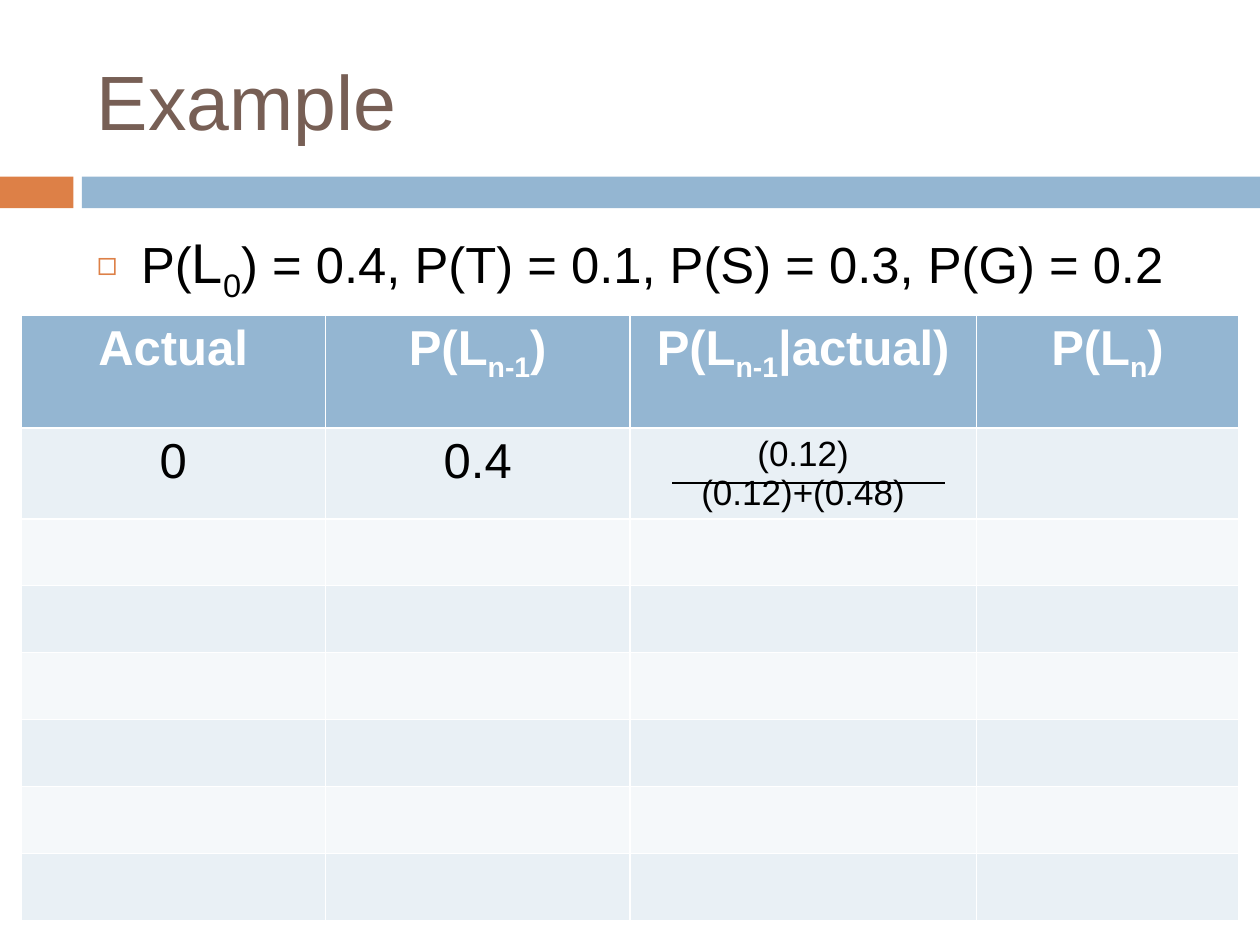
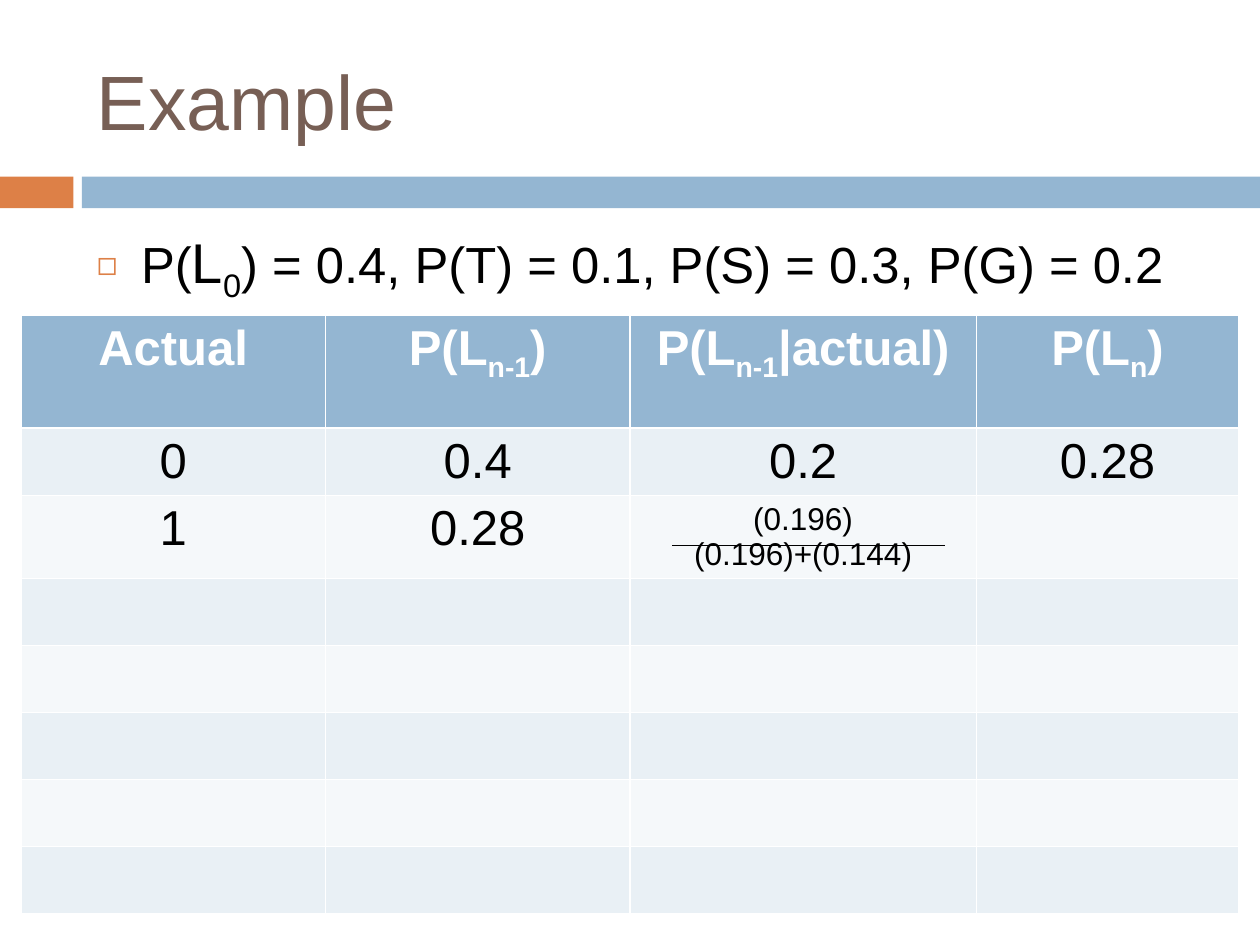
from dataclasses import dataclass
from lxml import etree
from pptx import Presentation
from pptx import util as u
from pptx.dml.color import RGBColor
from pptx.enum import shapes, text
from pptx.oxml import ns


@dataclass(frozen=True)
class Theme:
    face: str = "Arial"
    title: str = "775F55"
    mark: str = "DD8047"
    band: str = "94B6D2"
    odd: str = "E9F0F5"
    even: str = "F5F8FA"
    ink: str = "000000"
    white: str = "FFFFFF"
    big: int = 44
    list: int = 29
    wide: int = 32
    cell: int = 28
    rule: float = 0.79


def place(item, *box):
    """Set left, top, width and height, given in centimetres."""
    for name, value in zip(("left", "top", "width", "height"), box):
        setattr(item, name, u.Cm(value))


class Deck:
    COLS = (6.14, 6.14, 6.98, 5.29)
    HEAD, ROW, COUNT = 2.28, 1.35, 7

    def __init__(self, theme):
        self.theme = theme
        self.deck = Presentation()
        self.deck.slide_width, self.deck.slide_height = u.Cm(25.4), u.Cm(19.05)
        self.base = self.deck.slide_layouts[1]
        title, body = list(self.base.placeholders)[:2]
        place(title, 1.7, 0.64, 22.66, 2.75)
        place(body, 1.7, 4.45, 22.66, 12.5)
        self.slide = None

    def start(self):
        first = self.slide is None
        self.slide = self.deck.slides.add_slide(self.base)
        if first:
            self.band(0, 1.48, self.theme.mark)
            self.band(1.65, 23.75, self.theme.band)

    def band(self, left, width, color):
        """Draw a bar and hand it to the layout, so every slide shows it."""
        bar = self.slide.shapes.add_shape(
            shapes.MSO_SHAPE.RECTANGLE, *map(u.Cm, (left, 3.56, width, 0.64)))
        bar.shadow.inherit = False
        bar.fill.solid()
        bar.fill.fore_color.rgb = RGBColor.from_string(color)
        bar.line.fill.background()
        self.base.shapes.element.insert(2, bar.element)

    def put(self, para, words, size, color, bold=False):
        """Add runs; words between underscores are subscripts, \\n breaks the line."""
        style = {"name": self.theme.face, "size": u.Pt(size), "bold": bold}
        for i, part in enumerate(words.split("_")):
            for j, line in enumerate(part.split("\n")):
                if j:
                    para.add_line_break()
                run = para.add_run()
                run.text = line
                for name, value in style.items():
                    setattr(run.font, name, value)
                run.font.color.rgb = RGBColor.from_string(color)
                if i % 2:
                    run._r.get_or_add_rPr().set("baseline", "-25000")

    def title(self, words):
        frame = self.slide.shapes.title.text_frame
        frame.vertical_anchor = text.MSO_ANCHOR.MIDDLE
        para = frame.paragraphs[0]
        para.alignment = text.PP_ALIGN.LEFT
        self.put(para, words, self.theme.big, self.theme.title)

    def bullet(self, parts):
        para = self.slide.placeholders[1].text_frame.paragraphs[0]
        para.space_before = u.Pt(4)
        props = para._p.get_or_add_pPr()
        props.set("marL", str(u.Cm(0.89)))
        props.set("indent", str(-u.Cm(0.89)))
        color = etree.SubElement(props, ns.qn("a:buClr"))
        etree.SubElement(color, ns.qn("a:srgbClr"), val=self.theme.mark)
        etree.SubElement(props, ns.qn("a:buSzPct"), val="66000")
        etree.SubElement(props, ns.qn("a:buFont"), typeface=self.theme.face)
        etree.SubElement(props, ns.qn("a:buChar"), char="◻")
        for words, size in parts:
            self.put(para, words, size, self.theme.ink)

    def table(self, head, rows, small):
        """Fill a grid; cells with two lines take the small type size."""
        look = self.theme
        high = self.HEAD + self.ROW * self.COUNT
        grid = self.slide.shapes.add_table(
            self.COUNT + 1, len(self.COLS),
            *map(u.Cm, (0.42, 6.35, sum(self.COLS), high))).table
        for col, width in zip(grid.columns, self.COLS):
            col.width = u.Cm(width)
        for r, row in enumerate(grid.rows):
            row.height = u.Cm(self.ROW if r else self.HEAD)
            fill = (look.odd if r % 2 else look.even) if r else look.band
            for cell in row.cells:
                cell.fill.solid()
                cell.fill.fore_color.rgb = RGBColor.from_string(fill)
        for r, line in enumerate([head, *rows]):
            for c, words in enumerate(line):
                para = grid.cell(r, c).text_frame.paragraphs[0]
                para.alignment = text.PP_ALIGN.CENTER
                size = small if "\n" in words else look.cell
                self.put(para, words, size, look.ink if r else look.white, not r)

    def rule(self, top):
        line = self.slide.shapes.add_connector(
            shapes.MSO_CONNECTOR.STRAIGHT, *map(u.Cm, (13.55, top, 19.05, top)))
        line.line.width = u.Pt(self.theme.rule)
        line.line.color.rgb = RGBColor.from_string(self.theme.ink)
        etree.SubElement(line.element.spPr, ns.qn("a:effectLst"))


def main():
    look = Theme()
    deck = Deck(look)
    given = [("P(", look.list), ("L_0_", look.wide),
             (") = 0.4, P(T) = 0.1, P(S) = 0.3, P(G) = 0.2", look.list)]
    head = ["Actual", "P(L_n-1_)", "P(L_n-1_|actual)", "P(L_n_)"]
    steps = [
        ([["0", "0.4", "(0.12)\n(0.12)+(0.48)"]], 20, 9.74),
        ([["0", "0.4", "0.2", "0.28"],
          ["1", "0.28", "(0.196)\n(0.196)+(0.144)"]], 18, 11),
    ]
    for rows, small, top in steps:
        deck.start()
        deck.title("Example")
        deck.bullet(given)
        deck.table(head, rows, small)
        deck.rule(top)
    deck.deck.save("out.pptx")


if __name__ == "__main__":
    main()
